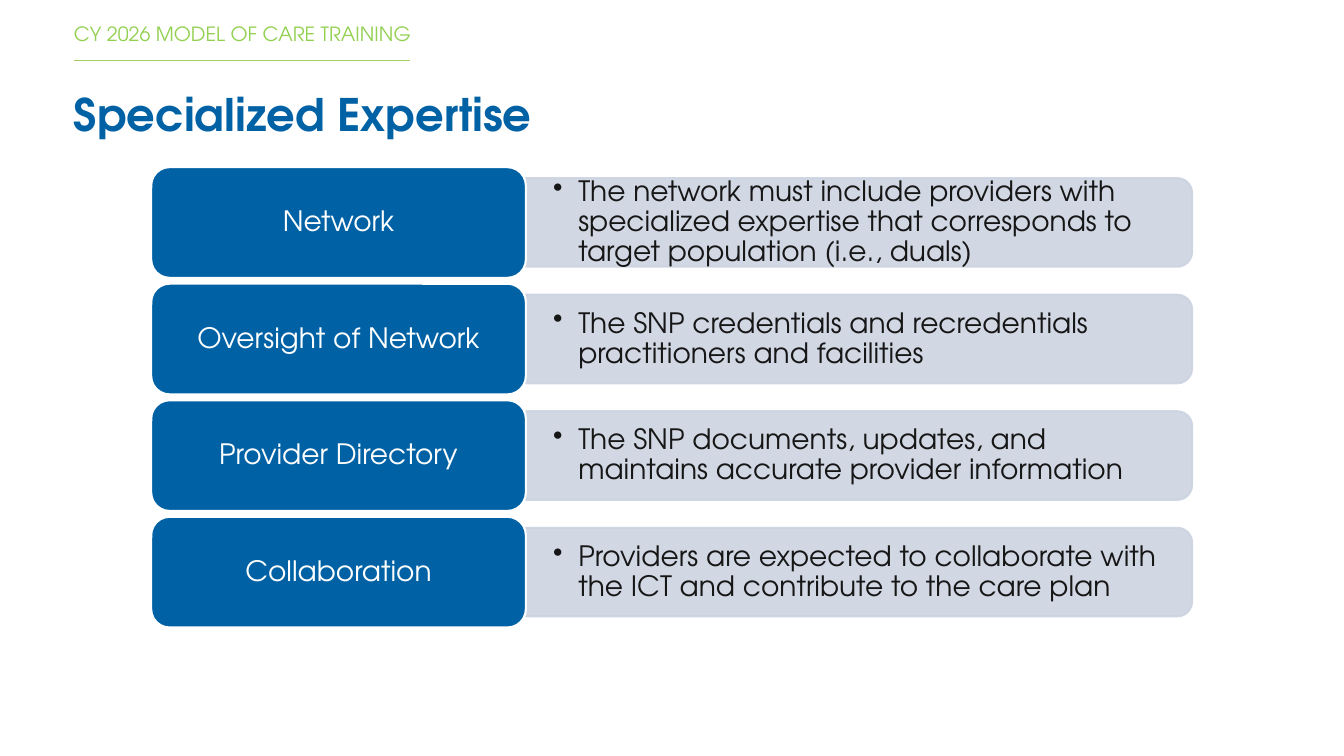
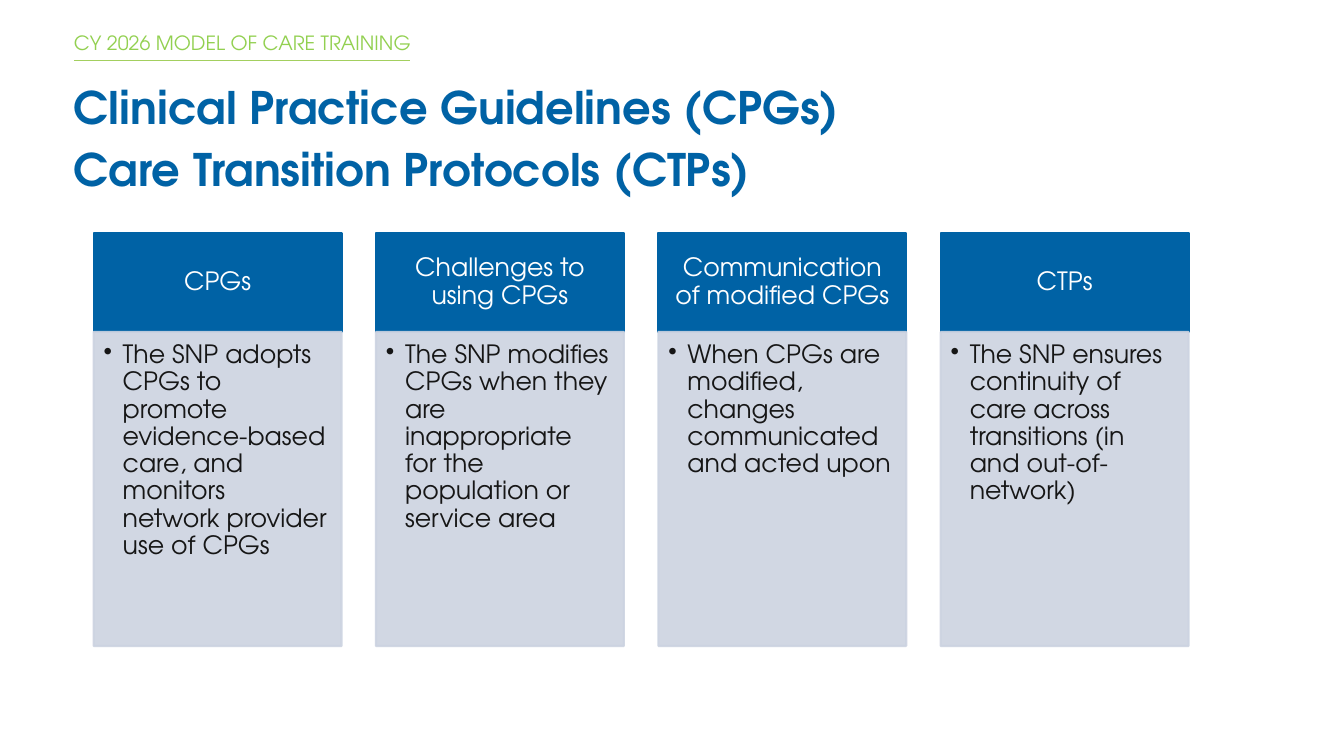
from dataclasses import dataclass

from lxml.etree import SubElement
from pptx import Presentation
from pptx.dml.color import RGBColor
from pptx.enum.shapes import MSO_CONNECTOR as Connector, MSO_SHAPE as Shape
from pptx.enum.text import MSO_ANCHOR as Anchor, MSO_AUTO_SIZE as AutoSize, PP_ALIGN as Align
from pptx.oxml.ns import qn
from pptx.util import Inches, Pt

WIDTH, HEIGHT = 13.33, 7.5
COLUMNS, ROWS = 160, 90
FONT = "TeX Gyre Adventor"
BLUE, GREEN, RULE = "0062A5", "92D050", "A3CF5F"
PANEL, INK, WHITE = "CCD3E1", "161616", "FFFFFF"
PANEL_OPACITY = 90
MARGIN = 8.8  # grid columns

HEADER = "CY 2026 MODEL OF CARE TRAINING"
EXPERTISE = [
    ("Network", "The network must include providers with specialized expertise "
                "that corresponds to target population (i.e., duals)"),
    ("Oversight of Network", "The SNP credentials and recredentials practitioners and facilities"),
    ("Provider Directory", "The SNP documents, updates, and maintains accurate provider information"),
    ("Collaboration", "Providers are expected to collaborate with the ICT "
                      "and contribute to the care plan"),
]
GUIDELINES = [
    ("CPGs", "The SNP adopts CPGs to promote evidence-based care, and "
             "monitors network provider use of CPGs"),
    ("Challenges to using CPGs", "The SNP modifies CPGs when they are inappropriate "
                                 "for the population or service area"),
    ("Communication of modified CPGs", "When CPGs are modified, changes communicated and acted upon"),
    ("CTPs", "The SNP ensures continuity of care across transitions (in and out-of-network)"),
]


@dataclass
class Box:
    """A rectangle in grid columns and rows."""
    left: float
    top: float
    width: float
    height: float

    def emu(self):
        across, down = WIDTH / COLUMNS, HEIGHT / ROWS
        return (Inches(self.left * across), Inches(self.top * down),
                Inches(self.width * across), Inches(self.height * down))

    def share(self, left, top, width, height):
        """The box at the given shares of this one."""
        return Box(self.left + left * self.width, self.top + top * self.height,
                   width * self.width, height * self.height)

    def row(self, index, count, gap):
        height = (self.height - gap * (count - 1)) / count
        return Box(self.left, self.top + index * (height + gap), self.width, height)

    def column(self, index, count, gap):
        width = (self.width - gap * (count - 1)) / count
        return Box(self.left + index * (width + gap), self.top, width, self.height)


def rgb(color):
    return RGBColor.from_string(color)


def place(shape, box):
    shape.left, shape.top, shape.width, shape.height = box.emu()


def add_panel(page, kind, box, fill, line, opacity=100):
    shape = page.shapes.add_shape(kind, *box.emu())
    shape.shadow.inherit = False
    shape.fill.solid()
    shape.fill.fore_color.rgb = rgb(fill)
    shape.line.color.rgb = rgb(line)
    shape.line.width = Pt(1.5)
    if opacity < 100:
        for color in shape._element.spPr.iter(qn("a:srgbClr")):
            SubElement(color, qn("a:alpha"), val=str(opacity * 1000))
    return shape


def add_bullet(para, indent):
    properties = para._p.get_or_add_pPr()
    properties.set("marL", str(Inches(indent)))
    properties.set("indent", str(-Inches(indent)))
    SubElement(properties, qn("a:buChar"), char="•")


def write(shape, lines, size, color, insets=(0, 0, 0, 0), anchor=Anchor.MIDDLE,
          align=Align.LEFT, spacing=0.9, after=0, bold=False, bullet=None):
    frame = shape.text_frame
    frame.word_wrap = True
    frame.auto_size = AutoSize.NONE
    frame.vertical_anchor = anchor
    (frame.margin_left, frame.margin_top,
     frame.margin_right, frame.margin_bottom) = map(Inches, insets)
    for index, line in enumerate(lines):
        para = frame.add_paragraph() if index else frame.paragraphs[0]
        para.alignment = align
        para.line_spacing = spacing
        para.space_after = Pt(after)
        if bullet:
            add_bullet(para, bullet)
        span = para.add_run()
        span.text = line
        span.font.name, span.font.size, span.font.bold = FONT, Pt(size), bold
        span.font.color.rgb = rgb(color)


def add_page(deck, title_lines, title_box, header_top):
    page = deck.slides.add_slide(deck.slide_layouts[5])
    rule_box = Box(MARGIN, 7.2, 40.05, 0)
    left, top, width, _ = rule_box.emu()
    rule = page.shapes.add_connector(Connector.STRAIGHT, left, top, left + width, top)
    rule.line.color.rgb = rgb(RULE)
    rule.line.width = Pt(1)
    SubElement(rule._element.spPr, qn("a:effectLst"))
    header = page.shapes.add_textbox(*Box(MARGIN, header_top, 50, 5.8).emu())
    write(header, [HEADER], 14, GREEN)
    place(page.shapes.title, title_box)
    write(page.shapes.title, title_lines, 32, BLUE, anchor=Anchor.TOP,
          spacing=1.0, after=6, bold=True)
    return page


def add_expertise_row(page, box, label, detail):
    """A label on the left, and a panel rounded on its right side."""
    label_share = 0.36
    panel_box = box.share(label_share, 0.1, 1 - label_share, 0.8)
    upright = Box(panel_box.left + (panel_box.width - panel_box.height) / 2,
                  panel_box.top + (panel_box.height - panel_box.width) / 2,
                  panel_box.height, panel_box.width)
    panel = add_panel(page, Shape.ROUND_2_SAME_RECTANGLE, upright, PANEL, PANEL, PANEL_OPACITY)
    panel.rotation = 90
    write(page.shapes.add_textbox(*panel_box.emu()), [detail], 20, INK,
          insets=(0.27, 0, 0.27, 0), bullet=0.25)
    name = add_panel(page, Shape.ROUNDED_RECTANGLE, box.share(0, 0, label_share, 1), BLUE, WHITE)
    write(name, [label], 20, WHITE, insets=(0.08, 0.04, 0.08, 0.04), align=Align.CENTER)


def add_guideline_column(page, box, label, detail):
    """A heading with a panel below it."""
    head_share = 0.24
    head = add_panel(page, Shape.RECTANGLE, box.share(0, 0, 1, head_share), BLUE, BLUE)
    write(head, [label], 18, WHITE, insets=(0.14, 0.08, 0.14, 0.08), align=Align.CENTER)
    body = add_panel(page, Shape.RECTANGLE, box.share(0, head_share, 1, 1 - head_share),
                     PANEL, PANEL, PANEL_OPACITY)
    write(body, [detail], 18, INK, insets=(0.1, 0.1, 0.14, 0.16),
          anchor=Anchor.TOP, bullet=0.19)


def add_expertise_page(deck):
    page = add_page(deck, ["Specialized Expertise"], Box(MARGIN, 10.3, 124, 8.3), 1.3)
    area = Box(18, 19.9, 123.9, 54.8)
    for index, (label, detail) in enumerate(EXPERTISE):
        add_expertise_row(page, area.row(index, len(EXPERTISE), 0.7), label, detail)


def add_guidelines_page(deck):
    titles = ["Clinical Practice Guidelines (CPGs)", "Care Transition Protocols (CTPs)"]
    page = add_page(deck, titles, Box(MARGIN, 9.5, 130.3, 16.7), 2.3)
    area = Box(11.15, 27.7, 130.35, 49.2)
    for index, (label, detail) in enumerate(GUIDELINES):
        add_guideline_column(page, area.column(index, len(GUIDELINES), 4.1), label, detail)


def main():
    deck = Presentation()
    deck.slide_width, deck.slide_height = Inches(WIDTH), Inches(HEIGHT)
    add_expertise_page(deck)
    add_guidelines_page(deck)
    deck.save("out.pptx")


if __name__ == "__main__":
    main()
